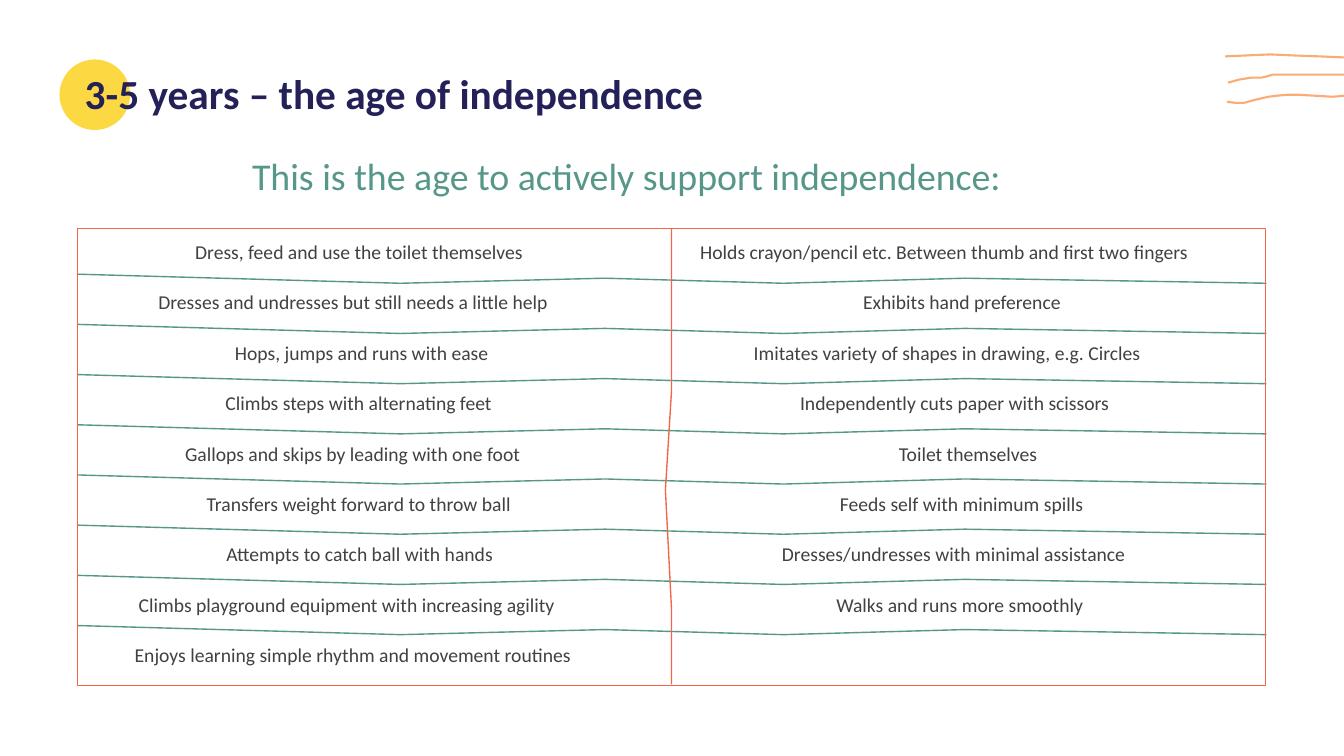
from pptx import Presentation
from pptx.dml.color import RGBColor
from pptx.enum.shapes import MSO_SHAPE as SHAPE
from pptx.enum.text import MSO_ANCHOR as ANCHOR, PP_ALIGN as ALIGN
from pptx.util import Inches, Pt

NAVY, GREEN, GREY = "232157", "579789", "414042"
YELLOW, ORANGE, PEACH = "FCD942", "F26647", "FAAC74"

# Milestones with the width of their boxes
LEFT_ITEMS = [
    ("Dress, feed and use the toilet themselves", 3.59),
    ("Dresses and undresses but still needs a little help", 4.32),
    ("Hops, jumps and runs with ease", 2.8),
    ("Climbs steps with alternating feet", 2.99),
    ("Gallops and skips by leading with one foot", 3.79),
    ("Transfers weight forward to throw ball", 3.36),
    ("Attempts to catch ball with hands", 2.97),
    ("Climbs playground equipment with increasing agility", 4.71),
    ("Enjoys learning simple rhythm and movement routines", 4.79),
]
RIGHT_ITEMS = [
    ("Holds crayon/pencil etc. Between thumb and ﬁrst two ﬁngers", 5.43),
    ("Exhibits hand preference", 2.2),
    ("Imitates variety of shapes in drawing, e.g. Circles", 4.37),
    ("Independently cuts paper with scissors", 3.45),
    ("Toilet themselves", 1.49),
    ("Feeds self with minimum spills", 2.66),
    ("Dresses/undresses with minimal assistance", 3.81),
    ("Walks and runs more smoothly", 2.73),
]
ROW_TOP, ROW_PITCH = 2.36, 0.5
WAVE_TOP, WAVE_PITCH = 2.72, 0.498
WAVE = [(0.77, 0), (3.97, 0.09), (6, 0.04), (7.77, 0.09), (9.57, 0.04), (12.56, 0.09)]
DIVIDER = [(6.66, 2.27), (6.66, 3.89), (6.6, 4.86), (6.66, 6.03), (6.66, 6.79)]
STROKES = [
    [(12.15, 0.56), (12.37, 0.55), (12.6, 0.54), (12.82, 0.55), (13.09, 0.56), (13.33, 0.57)],
    [(12.18, 0.82), (12.29, 0.79), (12.41, 0.77), (12.51, 0.77), (12.56, 0.76),
     (12.62, 0.74), (12.68, 0.74), (13.33, 0.74)],
    [(12.17, 1.01), (12.25, 1.02), (12.34, 1.02), (12.45, 0.99), (12.58, 0.96), (12.66, 0.95),
     (12.77, 0.94), (12.88, 0.94), (13.05, 0.95), (13.22, 0.96), (13.33, 0.95)],
]


def rgb(color):
    return RGBColor.from_string(color)


def set_text(shape, box, text, size, color, bold=False):
    shape.left, shape.top, shape.width, shape.height = map(Inches, box)
    tf = shape.text_frame
    tf.word_wrap = True
    tf.vertical_anchor = ANCHOR.TOP
    tf.margin_left = tf.margin_right = tf.margin_bottom = 0
    tf.margin_top = Inches(0.02)
    p = tf.paragraphs[0]
    p.text = text
    p.alignment = ALIGN.LEFT
    p.font.name, p.font.size, p.font.bold = "Calibri", Pt(size), bold
    p.font.color.rgb = rgb(color)


def add_text(s, box, text, size, color):
    set_text(s.shapes.add_textbox(*map(Inches, box)), box, text, size, color)


def set_outline(shape, color, width):
    shape.shadow.inherit = False
    shape.fill.background()
    shape.line.color.rgb = rgb(color)
    shape.line.width = Pt(width)


def add_polyline(s, points, color, width):
    start, *rest = [(Inches(x), Inches(y)) for x, y in points]
    builder = s.shapes.build_freeform(*start)
    builder.add_line_segments(rest, close=False)
    set_outline(builder.convert_to_shape(), color, width)


def add_column(s, items, center):
    for i, (text, width) in enumerate(items):
        box = (center - width / 2, ROW_TOP + i * ROW_PITCH, width, 0.26)
        add_text(s, box, text, 14, GREY)


def main():
    prs = Presentation()
    prs.slide_width, prs.slide_height = Inches(13.33), Inches(7.5)
    s = prs.slides.add_slide(prs.slide_layouts[5])

    # Title over its yellow dot
    title = s.shapes.title
    set_text(title, (0.84, 0.66, 7.19, 0.52), "3-5 years – the age of independence",
             29.5, NAVY, bold=True)
    dot = s.shapes.add_shape(SHAPE.OVAL, *map(Inches, (0.59, 0.59, 0.7, 0.7)))
    dot.shadow.inherit = False
    dot.fill.solid()
    dot.fill.fore_color.rgb = rgb(YELLOW)
    dot.line.fill.background()
    title.element.addprevious(dot.element)

    # Corner strokes and subtitle
    for points in STROKES:
        add_polyline(s, points, PEACH, 1.5)
    add_text(s, (2.5, 1.49, 8.33, 0.48),
             "This is the age to actively support independence:", 27, GREEN)

    # Milestones in two columns
    add_column(s, LEFT_ITEMS, 3.73)
    add_column(s, RIGHT_ITEMS, 9.66)

    # Hand-drawn grid
    for i in range(len(LEFT_ITEMS) - 1):
        top = WAVE_TOP + i * WAVE_PITCH
        add_polyline(s, [(x, top + dy) for x, dy in WAVE], GREEN, 1)
    frame = s.shapes.add_shape(SHAPE.RECTANGLE, *map(Inches, (0.77, 2.27, 11.78, 4.53)))
    set_outline(frame, ORANGE, 0.96)
    add_polyline(s, DIVIDER, ORANGE, 0.96)

    prs.save("out.pptx")


if __name__ == "__main__":
    main()
